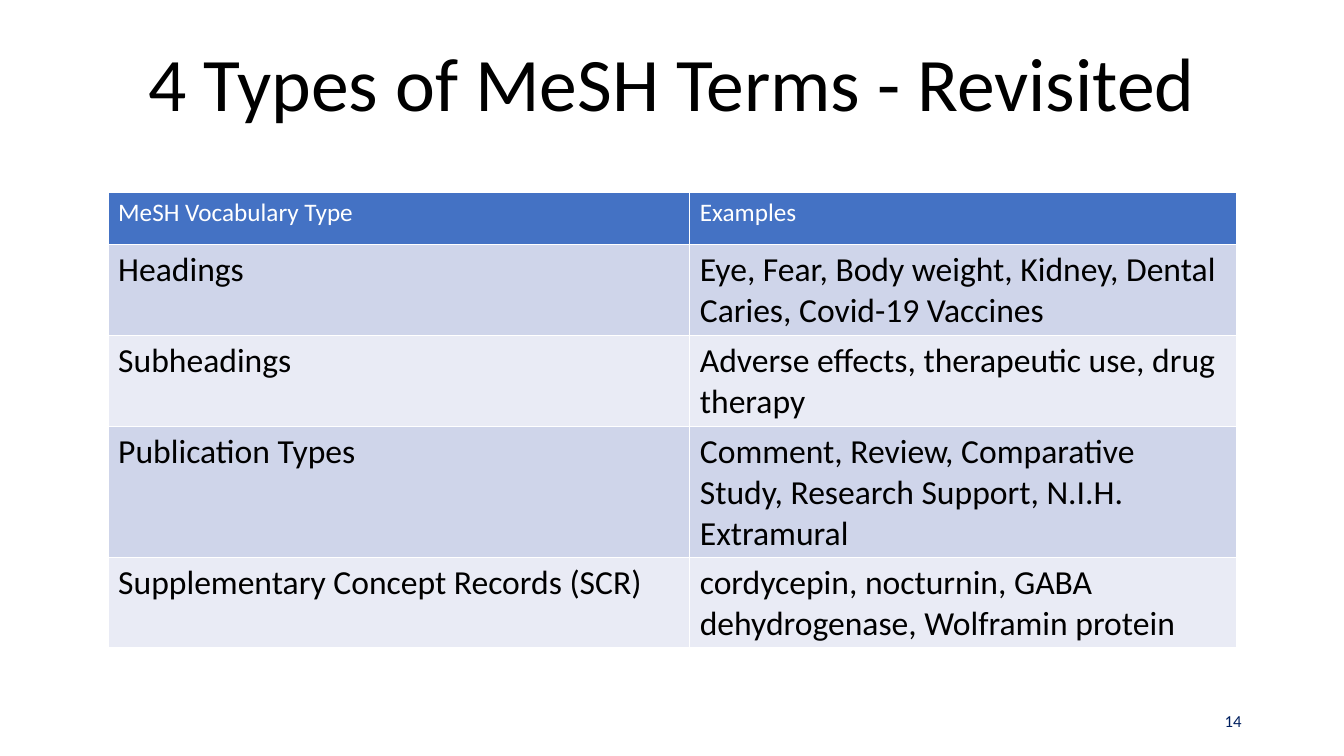
from dataclasses import dataclass

from pptx import Presentation
from pptx.dml.color import RGBColor
from pptx.enum.text import MSO_ANCHOR, MSO_AUTO_SIZE, PP_ALIGN
from pptx.util import Emu, Pt

PX = 9525


@dataclass(frozen=True)
class Theme:
    font: str = "Calibri"
    text: str = "000000"
    header_text: str = "FFFFFF"
    header_fill: str = "4472C4"
    band_fills: tuple = ("CFD5EA", "E9EBF5")
    number_text: str = "002060"
    title_size: int = 54
    header_size: int = 18
    body_size: int = 24
    number_size: int = 12


THEME = Theme()

TERM_ROWS = [
    ("MeSH Vocabulary Type", "Examples"),
    ("Headings", "Eye, Fear, Body weight, Kidney, Dental Caries, Covid-19 Vaccines"),
    ("Subheadings", "Adverse effects, therapeutic use, drug therapy"),
    (
        "Publication Types",
        "Comment, Review, Comparative\nStudy, Research Support, N.I.H. Extramural",
    ),
    (
        "Supplementary Concept Records (SCR)",
        "cordycepin, nocturnin, GABA dehydrogenase, Wolframin protein",
    ),
]
COLUMN_WIDTHS = (554, 521)
ROW_HEIGHTS = (50, 86, 86, 103, 86)


def px(length):
    return Emu(length * PX)


def write_text(frame, text, size, color, align=PP_ALIGN.LEFT):
    frame.text = text
    for para in frame.paragraphs:
        para.alignment = align
        para.font.name = THEME.font
        para.font.size = Pt(size)
        para.font.bold = False
        para.font.color.rgb = RGBColor.from_string(color)


def add_title(page, box, text):
    title = page.shapes.title
    title.left, title.top, title.width, title.height = map(px, box)
    frame = title.text_frame
    frame.word_wrap = True
    frame.auto_size = MSO_AUTO_SIZE.NONE
    frame.vertical_anchor = MSO_ANCHOR.MIDDLE
    write_text(frame, text, THEME.title_size, THEME.text, PP_ALIGN.CENTER)
    frame.paragraphs[0].line_spacing = 0.9


def add_terms_table(page, left, top):
    box = (left, top, sum(COLUMN_WIDTHS), sum(ROW_HEIGHTS))
    table = page.shapes.add_table(
        len(TERM_ROWS), len(COLUMN_WIDTHS), *map(px, box)
    ).table
    for column, width in zip(table.columns, COLUMN_WIDTHS):
        column.width = px(width)
    for index, (row, height, texts) in enumerate(
        zip(table.rows, ROW_HEIGHTS, TERM_ROWS)
    ):
        row.height = px(height)
        if index == 0:
            fill, size, color = THEME.header_fill, THEME.header_size, THEME.header_text
        else:
            fill = THEME.band_fills[(index - 1) % 2]
            size, color = THEME.body_size, THEME.text
        for cell, text in zip(row.cells, texts):
            cell.fill.solid()
            cell.fill.fore_color.rgb = RGBColor.from_string(fill)
            write_text(cell.text_frame, text, size, color)


def add_page_number(page, box, number):
    frame = page.shapes.add_textbox(*map(px, box)).text_frame
    frame.word_wrap = True
    frame.vertical_anchor = MSO_ANCHOR.MIDDLE
    write_text(
        frame, str(number), THEME.number_size, THEME.number_text, PP_ALIGN.RIGHT
    )


def main():
    deck = Presentation()
    deck.slide_width, deck.slide_height = px(1280), px(720)
    page = deck.slides.add_slide(deck.slide_layouts.get_by_name("Title Only"))
    add_page_number(page, (1076, 667, 116, 38), 14)
    add_title(page, (88, 33, 1104, 100), "4 Types of MeSH Terms - Revisited")
    add_terms_table(page, 103, 183)
    deck.save("out.pptx")


if __name__ == "__main__":
    main()
